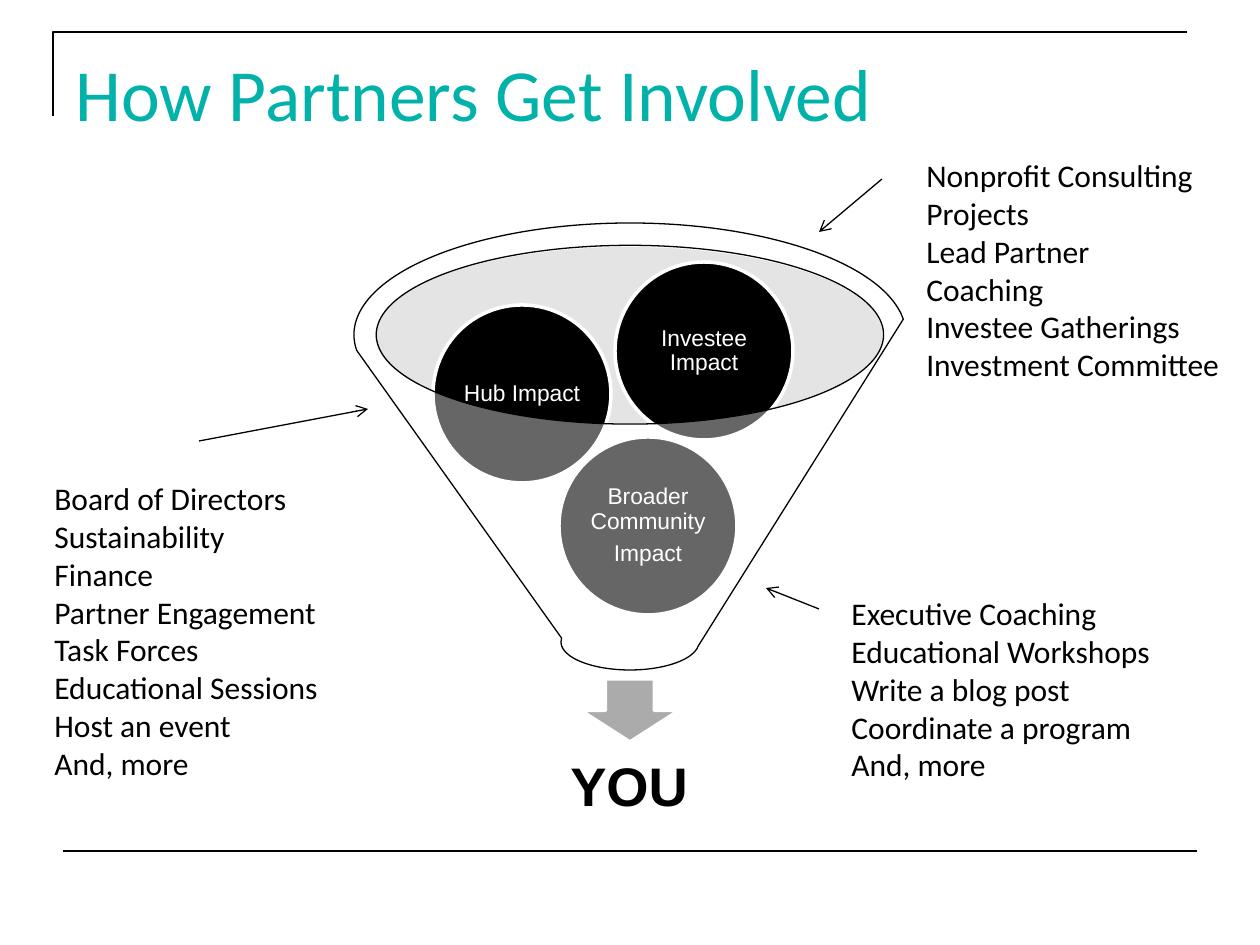
import pptx
import pptx.dml.color
import pptx.enum.shapes
import pptx.enum.text
import pptx.oxml.ns
import pptx.util
from lxml import etree

BLACK = pptx.dml.color.RGBColor(0x00, 0x00, 0x00)
WHITE = pptx.dml.color.RGBColor(0xFF, 0xFF, 0xFF)
TEAL = pptx.dml.color.RGBColor(0x00, 0xB2, 0xA9)
LIGHT_GRAY = pptx.dml.color.RGBColor(0xBD, 0xBD, 0xBD)
ARROW_GRAY = pptx.dml.color.RGBColor(0xAB, 0xAB, 0xAB)

PX = 914400 / 126  # EMU in one pixel
SHAPES = pptx.enum.shapes.MSO_SHAPE
CENTER = pptx.enum.text.PP_ALIGN.CENTER
MIDDLE = pptx.enum.text.MSO_ANCHOR.MIDDLE
qn = pptx.oxml.ns.qn


def emu(*lengths):
    return [round(length * PX) for length in lengths]


def add_shape(kind, box, fill, line=None, width=0, opacity=100):
    shape = slide.shapes.add_shape(kind, *emu(*box))
    shape.shadow.inherit = False
    shape.fill.solid()
    shape.fill.fore_color.rgb = fill
    if opacity < 100:
        color = shape.fill._xPr.find(qn("a:solidFill"))[0]
        etree.SubElement(color, qn("a:alpha"), val=str(opacity * 1000))
    if line is None:
        shape.line.fill.background()
    else:
        shape.line.color.rgb = line
        shape.line.width = pptx.util.Pt(width)
    return shape


presentation = pptx.Presentation()
presentation.slide_width, presentation.slide_height = emu(1260, 945)
slide = presentation.slides.add_slide(presentation.slide_layouts[5])

# Title
title = slide.shapes.title
title.left, title.top, title.width, title.height = emu(63, 42, 1008, 158)
title.text_frame.text = "How Partners Get Involved"
title.text_frame.vertical_anchor = pptx.enum.text.MSO_ANCHOR.TOP
paragraph = title.text_frame.paragraphs[0]
paragraph.alignment = pptx.enum.text.PP_ALIGN.LEFT
paragraph.font.name = "Calibri"
paragraph.font.size = pptx.util.Pt(42)
paragraph.font.color.rgb = TEAL

# Corner frame around the title
builder = slide.shapes.build_freeform(53, 116, scale=PX)
builder.add_line_segments([(53, 32), (1187, 32)], close=False)
frame = builder.convert_to_shape()
frame.shadow.inherit = False
frame.fill.background()
frame.line.color.rgb = BLACK
frame.line.width = pptx.util.Pt(1.5)

# Funnel mouth and outlet arrow
add_shape(SHAPES.OVAL, (375, 247, 508, 176), LIGHT_GRAY, opacity=40)
add_shape(SHAPES.DOWN_ARROW, (581, 679, 98, 63), ARROW_GRAY, WHITE, 2)

# Funnel result
result = slide.shapes.add_textbox(*emu(393, 730, 472, 118))
result.text_frame.word_wrap = True
result.text_frame.vertical_anchor = MIDDLE
result.text_frame.text = "YOU"
paragraph = result.text_frame.paragraphs[0]
paragraph.alignment = CENTER
paragraph.line_spacing = 0.9
paragraph.font.name = "Arial"
paragraph.font.size = pptx.util.Pt(31)
paragraph.font.bold = True
paragraph.font.color.rgb = BLACK

# Balls in the funnel
balls = [
    (559, 437, "Broader Community\nImpact"),
    (433, 305, "Hub Impact"),
    (615, 262, "Investee Impact"),
]
for left, top, text in balls:
    ball = add_shape(SHAPES.OVAL, (left, top, 178, 178), BLACK, WHITE, 2)
    text_frame = ball.text_frame
    text_frame.margin_left = text_frame.margin_right = emu(2)[0]
    text_frame.margin_top = text_frame.margin_bottom = emu(2)[0]
    text_frame.word_wrap = True
    text_frame.vertical_anchor = MIDDLE
    text_frame.text = text
    for paragraph in text_frame.paragraphs:
        paragraph.alignment = CENTER
        paragraph.line_spacing = 0.9
        paragraph.space_after = pptx.util.Pt(4.5)
        paragraph.font.name = "Arial"
        paragraph.font.size = pptx.util.Pt(13)
        paragraph.font.color.rgb = WHITE

# Translucent funnel over the balls
add_shape(SHAPES.FUNNEL, (354, 223, 552, 447), WHITE, BLACK, 0.75, opacity=40)

# Lists of ways to get involved
lists = [
    ((914, 150, 368, 242), [
        "Nonprofit Consulting Projects", "Lead Partner", "Coaching",
        "Investee Gatherings", "Investment Committee"]),
    ((839, 588, 472, 204), [
        "Executive Coaching", "Educational Workshops", "Write a blog post",
        "Coordinate a program", "And, more"]),
    ((42, 473, 431, 318), [
        "Board of Directors", "Sustainability", "Finance",
        "Partner Engagement", "Task Forces", "Educational Sessions",
        "Host an event", "And, more"]),
]
for box, items in lists:
    text_frame = slide.shapes.add_textbox(*emu(*box)).text_frame
    text_frame.word_wrap = True
    text_frame.auto_size = pptx.enum.text.MSO_AUTO_SIZE.SHAPE_TO_FIT_TEXT
    text_frame.text = "\n".join(items)
    for paragraph in text_frame.paragraphs:
        paragraph.font.name = "Calibri"
        paragraph.font.size = pptx.util.Pt(18)
        paragraph.font.color.rgb = BLACK

# Footer rule and arrows from the lists to the funnel
lines = [
    ((63, 851, 1197, 851), 1.5, False),
    ((199, 441, 368, 409), 0.75, True),
    ((882, 179, 819, 232), 0.75, True),
    ((819, 609, 766, 588), 0.75, True),
]
for ends, width, has_arrow in lines:
    connector = slide.shapes.add_connector(
        pptx.enum.shapes.MSO_CONNECTOR.STRAIGHT, *emu(*ends))
    connector.line.color.rgb = BLACK
    connector.line.width = pptx.util.Pt(width)
    if has_arrow:
        etree.SubElement(connector.line._get_or_add_ln(), qn("a:tailEnd"), type="arrow")
    etree.SubElement(connector._element.spPr, qn("a:effectLst"))

presentation.save("out.pptx")
